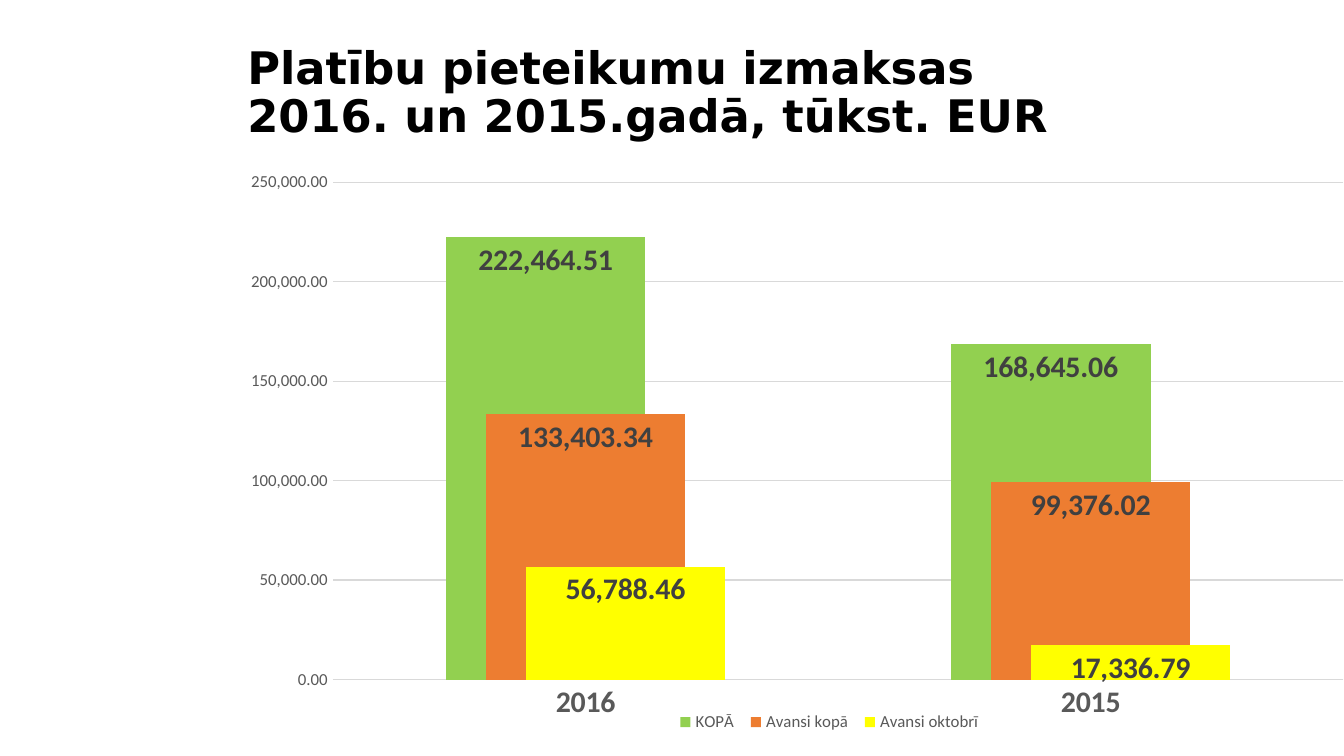
from lxml import etree
from pptx import Presentation
from pptx import util as u
from pptx.chart.data import CategoryChartData
from pptx.dml.color import RGBColor
from pptx.enum import chart as kinds
from pptx.enum import text
from pptx.oxml.ns import qn

YEARS = ["2016", "2015"]
SERIES = [
    ("KOPĀ", "92D050", (222464.51, 168645.06)),
    ("Avansi kopā", "ED7D31", (133403.34, 99376.02)),
    ("Avansi oktobrī", "FFFF00", (56788.46, 17336.79)),
]
NUMBER_FORMAT = "#,##0.00"


def color(value):
    """Return the colour for a hex string."""
    return RGBColor.from_string(value)


def style_font(font, name, size, value, bold=False):
    """Set the face, size, colour and weight of a font."""
    font.name, font.size, font.bold = name, u.Pt(size), bold
    font.color.rgb = color(value)


def style_line(line, value):
    """Give a chart line its colour and thin width."""
    line.color.rgb = color(value)
    line.width = u.Pt(0.75)


def add_title(slide, lines):
    """Add the bold title, with its lines broken inside one paragraph."""
    box = slide.shapes.add_textbox(
        u.Inches(1.77), u.Inches(0.1), u.Inches(8.37), u.Inches(1.2))
    frame = box.text_frame
    frame.word_wrap = True
    frame.vertical_anchor = text.MSO_ANCHOR.MIDDLE
    frame.margin_left = frame.margin_right = u.Inches(0.07)
    frame.margin_top = frame.margin_bottom = u.Inches(0.04)
    para = frame.paragraphs[0]
    para.line_spacing = 0.9
    for index, line in enumerate(lines):
        if index:
            para.add_line_break()
        span = para.add_run()
        span.text = line
        style_font(span.font, "DejaVu Sans", 24, "000000", True)


def place_part(part, position, **settings):
    """Give a chart part a manual layout, in fractions of the chart."""
    for old in part.findall(qn("c:layout")):
        part.remove(old)
    layout = etree.Element(qn("c:layout"))
    manual = etree.SubElement(layout, qn("c:manualLayout"))
    for tag, value in settings.items():
        etree.SubElement(manual, qn(f"c:{tag}")).set("val", str(value))
    part.insert(position, layout)


def style_axes(chart):
    """Style the year axis, the amount axis and its gridlines."""
    years, amounts = chart.category_axis, chart.value_axis
    for axis in (years, amounts):
        axis.major_tick_mark = axis.minor_tick_mark = kinds.XL_TICK_MARK.NONE
    style_font(years.tick_labels.font, "Calibri", 16, "595959", True)
    style_line(years.format.line, "D9D9D9")
    style_font(amounts.tick_labels.font, "Calibri", 9, "595959")
    amounts.tick_labels.number_format = NUMBER_FORMAT
    amounts.tick_labels.number_format_is_linked = False
    amounts.format.line.fill.background()
    style_line(amounts.major_gridlines.format.line, "D9D9D9")


def style_series(series, value):
    """Fill one series and label its columns."""
    series.format.fill.solid()
    series.format.fill.fore_color.rgb = color(value)
    series.invert_if_negative = False
    labels = series.data_labels
    labels.show_value = True
    labels.position = kinds.XL_LABEL_POSITION.INSIDE_END
    labels.number_format = NUMBER_FORMAT
    labels.number_format_is_linked = False
    style_font(labels.font, "Calibri", 16, "404040", True)


def add_legend(chart):
    """Add the legend below the year axis."""
    chart.has_legend = True
    legend = chart.legend
    legend.position = kinds.XL_LEGEND_POSITION.BOTTOM
    legend.include_in_layout = False
    style_font(legend.font, "Calibri", 9, "595959")
    place_part(legend._element, 1, xMode="edge", yMode="edge",
               x=0.39, y=0.9, w=0.29, h=0.06)


def add_payment_chart(slide):
    """Add the overlapping column chart of payments."""
    data = CategoryChartData(number_format=NUMBER_FORMAT)
    data.categories = YEARS
    for name, _, values in SERIES:
        data.add_series(name, values)
    chart = slide.shapes.add_chart(
        kinds.XL_CHART_TYPE.COLUMN_CLUSTERED, u.Inches(1.77), u.Inches(1.05),
        u.Inches(8.23), u.Inches(4.65), data).chart
    style_font(chart.font, "Calibri", 10, "000000")
    chart.has_title = False
    add_legend(chart)
    plot = chart.plots[0]
    plot.gap_width, plot.overlap = 113, 80
    plot.vary_by_categories = False
    for series, (_, fill, _) in zip(plot.series, SERIES):
        style_series(series, fill)
    style_axes(chart)
    place_part(chart._chartSpace.chart.plotArea, 0, layoutTarget="inner",
               xMode="edge", yMode="edge", x=0.086, y=0.066, w=0.914, h=0.796)


def main():
    """Build and save the slide."""
    deck = Presentation()
    deck.slide_width = u.Inches(10)
    deck.slide_height = deck.slide_width * 9 // 16
    slide = deck.slides.add_slide(deck.slide_layouts[6])
    add_title(slide, ["Platību pieteikumu izmaksas",
                      "2016. un 2015.gadā, tūkst. EUR"])
    add_payment_chart(slide)
    deck.save("out.pptx")


if __name__ == "__main__":
    main()
